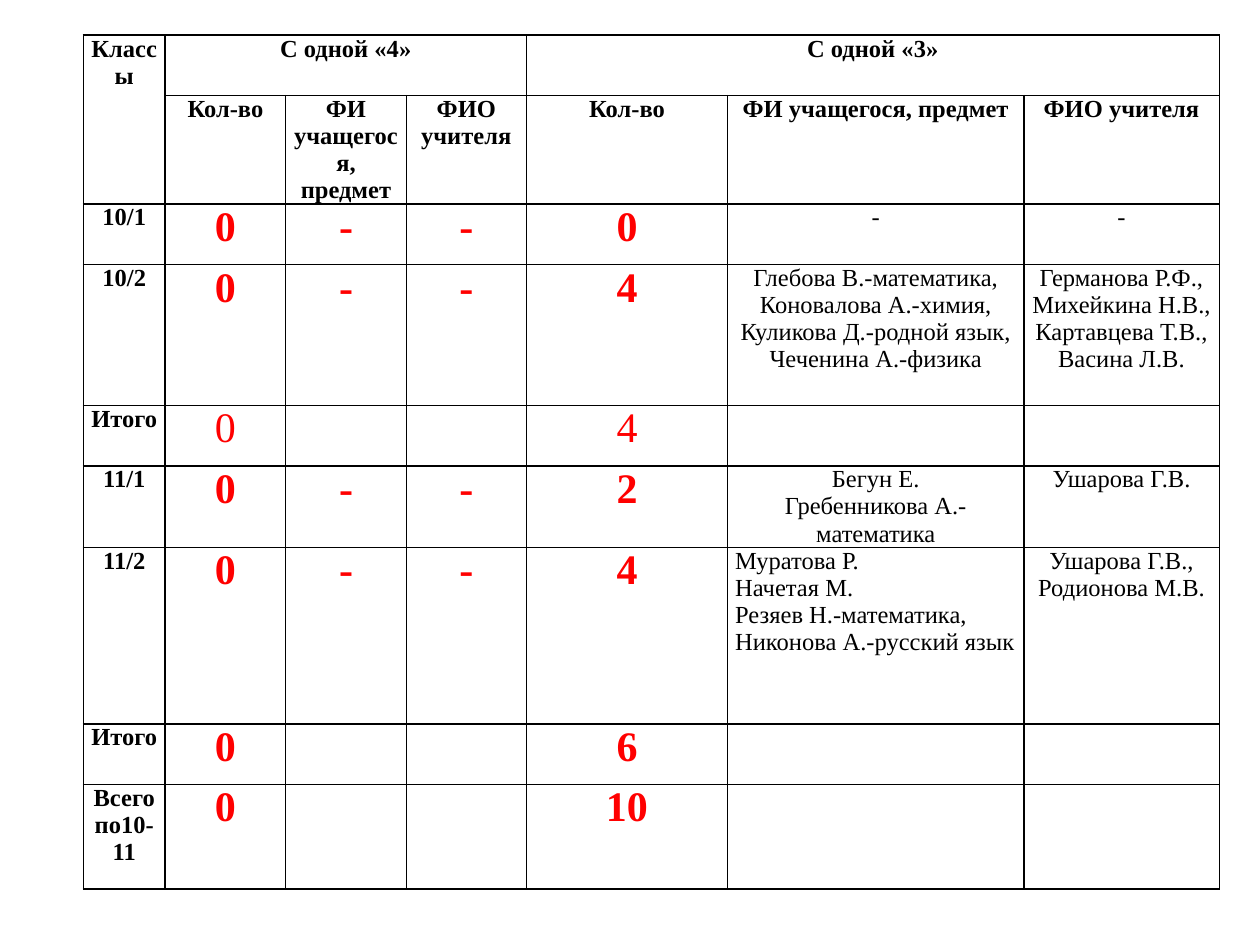
from lxml import etree
from pptx import Presentation
from pptx.dml.color import RGBColor
from pptx.enum.text import MSO_ANCHOR, PP_ALIGN
from pptx.oxml.ns import qn
from pptx.util import Cm, Pt

CENTER, LEFT = PP_ALIGN.CENTER, PP_ALIGN.LEFT
TOP = MSO_ANCHOR.TOP
COLORS = {"text": "000000", "count": "FF0000", "cell": "FFFFFF", "border": "000000"}

COLUMN_WIDTHS = [1.65, 2.43, 2.43, 2.42, 4.06, 5.97, 3.94]
ROW_HEIGHTS = [1.22, 2.13, 1.22, 2.84, 1.22, 1.42, 3.56, 1.22, 2.11]
HEADER_ROWS = 2
COUNT_COLUMNS = range(1, 5)
FIRST_SUBTOTAL_ROW = 4
MERGES = [((0, 0), (1, 0)), ((0, 1), (0, 3)), ((0, 4), (0, 6))]
LEFT_ALIGNED = (6, 5)

SUBHEADINGS = ["Кол-во", "ФИ учащегося, предмет", "ФИО учителя"]
ROWS = [
    ["Классы", "С одной «4»", "", "", "С одной «3»", "", ""],
    ["", *SUBHEADINGS, *SUBHEADINGS],
    ["10/1", "0", "-", "-", "0", "-", "-"],
    ["10/2", "0", "-", "-", "4",
     "Глебова В.-математика,\nКоновалова А.-химия,\n"
     "Куликова Д.-родной язык,\nЧеченина А.-физика",
     "Германова Р.Ф.,\nМихейкина Н.В.,\nКартавцева Т.В.,\nВасина Л.В."],
    ["Итого", "0", "", "", "4", "", ""],
    ["11/1", "0", "-", "-", "2",
     "Бегун Е.\nГребенникова А.-математика", "Ушарова Г.В."],
    ["11/2", "0", "-", "-", "4",
     "Муратова Р.\nНачетая М.\nРезяев Н.-математика,\nНиконова А.-русский язык",
     "Ушарова Г.В., Родионова М.В."],
    ["Итого", "0", "", "", "6", "", ""],
    ["Всего по10-11", "0", "", "", "10", "", ""],
]


class SlideWriter:
    """Holds the text style and the current slide."""

    font = "Times New Roman"

    def __init__(self, slide):
        self.slide = slide

    def table(self, left, top, widths, heights):
        frame = self.slide.shapes.add_table(
            len(heights), len(widths), Cm(left), Cm(top),
            Cm(sum(widths)), Cm(sum(heights)))
        table = frame.table
        for column, width in zip(table.columns, widths):
            column.width = Cm(width)
        for row, height in zip(table.rows, heights):
            row.height = Cm(height)
        return table

    def cell_box(self, cell):
        cell.margin_left = cell.margin_right = Cm(0.15)
        cell.margin_top = cell.margin_bottom = 0
        cell.vertical_anchor = TOP
        properties = cell._tc.get_or_add_tcPr()
        for side in ("a:lnL", "a:lnR", "a:lnT", "a:lnB"):
            line = etree.SubElement(properties, qn(side), w=str(Pt(1)))
            fill = etree.SubElement(line, qn("a:solidFill"))
            etree.SubElement(fill, qn("a:srgbClr"), val=COLORS["border"])
        cell.fill.solid()
        cell.fill.fore_color.rgb = RGBColor.from_string(COLORS["cell"])

    def cell_text(self, cell, text, size, color, bold, align):
        frame = cell.text_frame
        for index, line in enumerate(text.split("\n")):
            para = frame.add_paragraph() if index else frame.paragraphs[0]
            para.alignment = align
            span = para.add_run()
            span.text = line
            span.font.name = self.font
            span.font.size = Pt(size)
            span.font.bold = bold
            span.font.color.rgb = RGBColor.from_string(COLORS[color])


def main():
    deck = Presentation()
    deck.slide_width, deck.slide_height = Cm(25.4), Cm(19.05)
    writer = SlideWriter(deck.slides.add_slide(deck.slide_layouts[6]))

    # Grid with merged headings
    table = writer.table(1.68, 0.71, COLUMN_WIDTHS, ROW_HEIGHTS)
    for first, last in MERGES:
        table.cell(*first).merge(table.cell(*last))

    # Cells: red counts, bold headings and class names, plain names
    for r, texts in enumerate(ROWS):
        for c, text in enumerate(texts):
            cell = table.cell(r, c)
            writer.cell_box(cell)
            if not text:
                continue
            is_count = r >= HEADER_ROWS and c in COUNT_COLUMNS
            size, color = (24, "count") if is_count else (14, "text")
            if is_count:
                bold = r != FIRST_SUBTOTAL_ROW
            else:
                bold = r < HEADER_ROWS or c == 0
            align = LEFT if (r, c) == LEFT_ALIGNED else CENTER
            writer.cell_text(cell, text, size, color, bold, align)

    deck.save("out.pptx")


if __name__ == "__main__":
    main()
